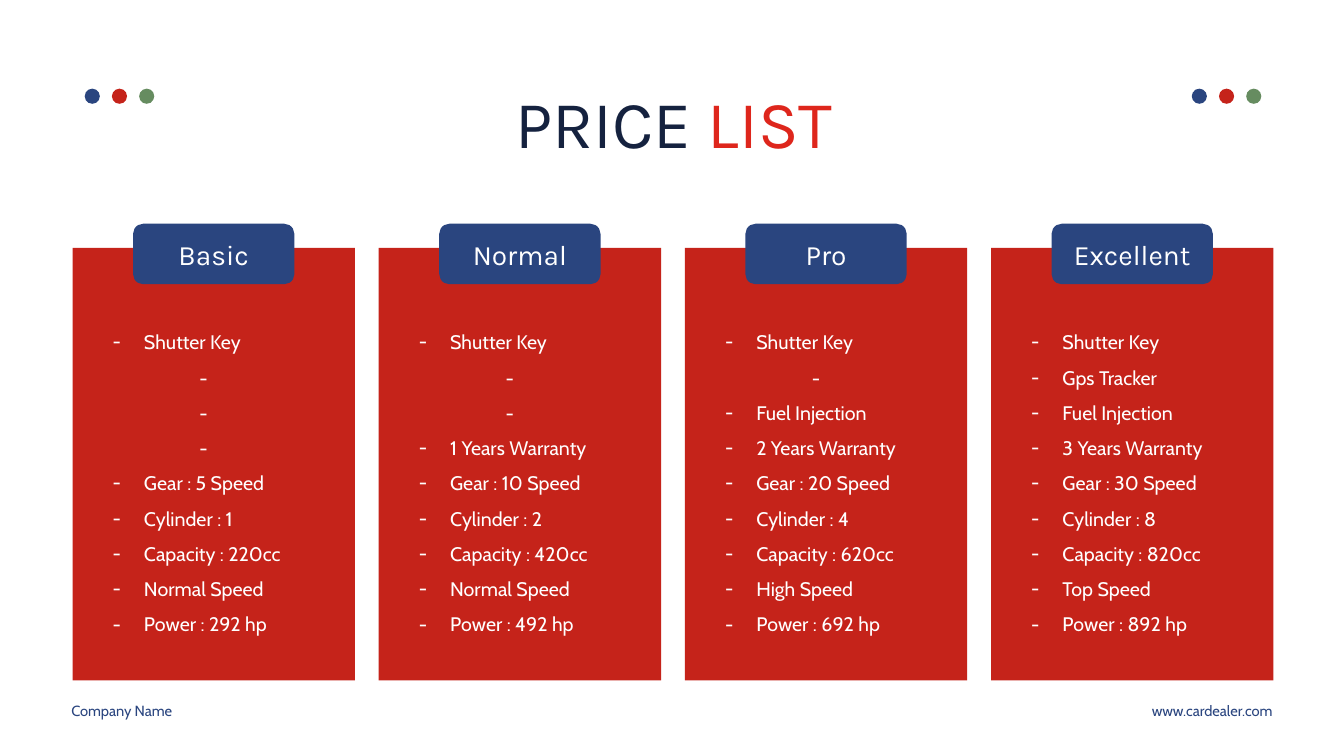
import pptx
import pptx.util
import pptx.dml.color
import pptx.enum.shapes
import pptx.enum.text
import pptx.oxml
import pptx.oxml.ns
from pptx.util import Inches

RGBColor = pptx.dml.color.RGBColor
SHAPE = pptx.enum.shapes.MSO_SHAPE
ALIGN = pptx.enum.text.PP_ALIGN
ANCHOR = pptx.enum.text.MSO_ANCHOR

BLUE = RGBColor(0x2A, 0x45, 0x7F)
RED = RGBColor(0xC5, 0x23, 0x1A)
GREEN = RGBColor(0x66, 0x8C, 0x60)
NAVY = RGBColor(0x15, 0x22, 0x3F)
BRIGHT_RED = RGBColor(0xDE, 0x26, 0x1C)
WHITE = RGBColor(0xFF, 0xFF, 0xFF)

PLANS = {
    "Basic": ["Shutter Key", "-", "-", "-", "Gear : 5 Speed", "Cylinder : 1",
              "Capacity : 220cc", "Normal Speed", "Power : 292 hp"],
    "Normal": ["Shutter Key", "-", "-", "1 Years Warranty", "Gear : 10 Speed", "Cylinder : 2",
               "Capacity : 420cc", "Normal Speed", "Power : 492 hp"],
    "Pro": ["Shutter Key", "-", "Fuel Injection", "2 Years Warranty", "Gear : 20 Speed", "Cylinder : 4",
            "Capacity : 620cc", "High Speed", "Power : 692 hp"],
    "Excellent": ["Shutter Key", "Gps Tracker", "Fuel Injection", "3 Years Warranty", "Gear : 30 Speed",
                  "Cylinder : 8", "Capacity : 820cc", "Top Speed", "Power : 892 hp"],
}
BULLET = (
    f'<a:buClr {pptx.oxml.ns.nsdecls("a")}><a:srgbClr val="{WHITE}"/></a:buClr>',
    f'<a:buFont {pptx.oxml.ns.nsdecls("a")} typeface="Cabin"/>',
    f'<a:buChar {pptx.oxml.ns.nsdecls("a")} char="-"/>',
)


def add_filled(shapes, kind, left, top, width, height, color):
    sp = shapes.add_shape(kind, Inches(left), Inches(top), Inches(width), Inches(height))
    sp.shadow.inherit = False
    sp.fill.solid()
    sp.fill.fore_color.rgb = color
    sp.line.fill.background()
    return sp


def style(font, name, size, color):
    font.name = name
    font.size = pptx.util.Pt(size)
    font.color.rgb = color


prs = pptx.Presentation()
prs.slide_width = Inches(13.33)
prs.slide_height = Inches(7.5)
s = prs.slides.add_slide(prs.slide_layouts[5])

title = s.shapes.title
title.left, title.top = Inches(3.21), Inches(0.76)
title.width, title.height = Inches(6.95), Inches(0.91)
tf = title.text_frame
tf.auto_size = pptx.enum.text.MSO_AUTO_SIZE.NONE
tf.vertical_anchor = ANCHOR.TOP
p = tf.paragraphs[0]
p.alignment = ALIGN.CENTER
for word, color in (("PRICE ", NAVY), ("LIST", BRIGHT_RED)):
    r = p.add_run()
    r.text = word
    style(r.font, "Karla", 48, color)

for text, left, width, align in (
    ("Company Name", 0.61, 1.27, ALIGN.LEFT),
    ("www.cardealer.com", 11.26, 1.46, ALIGN.RIGHT),
):
    sp = s.shapes.add_textbox(Inches(left), Inches(6.91), Inches(width), Inches(0.28))
    tf = sp.text_frame
    tf.word_wrap = True
    tf.text = text
    p = tf.paragraphs[0]
    p.alignment = align
    style(p.runs[0].font, "Cabin", 10.5, BLUE)

pitch = (9.83 - 0.72) / 3
for column, (plan, features) in enumerate(PLANS.items()):
    left = 0.72 + column * pitch
    add_filled(s.shapes, SHAPE.RECTANGLE, left, 2.46, 2.8, 4.29, RED)

    label = add_filled(s.shapes, SHAPE.ROUNDED_RECTANGLE, left + 0.6, 2.22, 1.6, 0.6, BLUE)
    tf = label.text_frame
    tf.text = plan
    tf.vertical_anchor = ANCHOR.MIDDLE
    p = tf.paragraphs[0]
    p.alignment = ALIGN.CENTER
    style(p.runs[0].font, "Karla", 20, WHITE)

    sp = s.shapes.add_textbox(Inches(left + 0.3), Inches(3.11), Inches(2), Inches(3.24))
    tf = sp.text_frame
    tf.word_wrap = True
    tf.text = "\n".join(features)
    for p in tf.paragraphs:
        p.line_spacing = 1.5
        if p.text == "-":
            p.alignment = ALIGN.CENTER
        else:
            pPr = p._p.get_or_add_pPr()
            pPr.set("marL", str(Inches(0.31)))
            pPr.set("indent", str(Inches(-0.31)))
            for xml in BULLET:
                pPr.append(pptx.oxml.parse_xml(xml))
        style(p.runs[0].font, "Cabin", 14, WHITE)

for left in (0.84, 11.82):
    dots = s.shapes.add_group_shape()
    for i, color in enumerate((BLUE, RED, GREEN)):
        add_filled(dots.shapes, SHAPE.OVAL, left + i * 0.27, 0.88, 0.15, 0.15, color)

prs.save("out.pptx")
